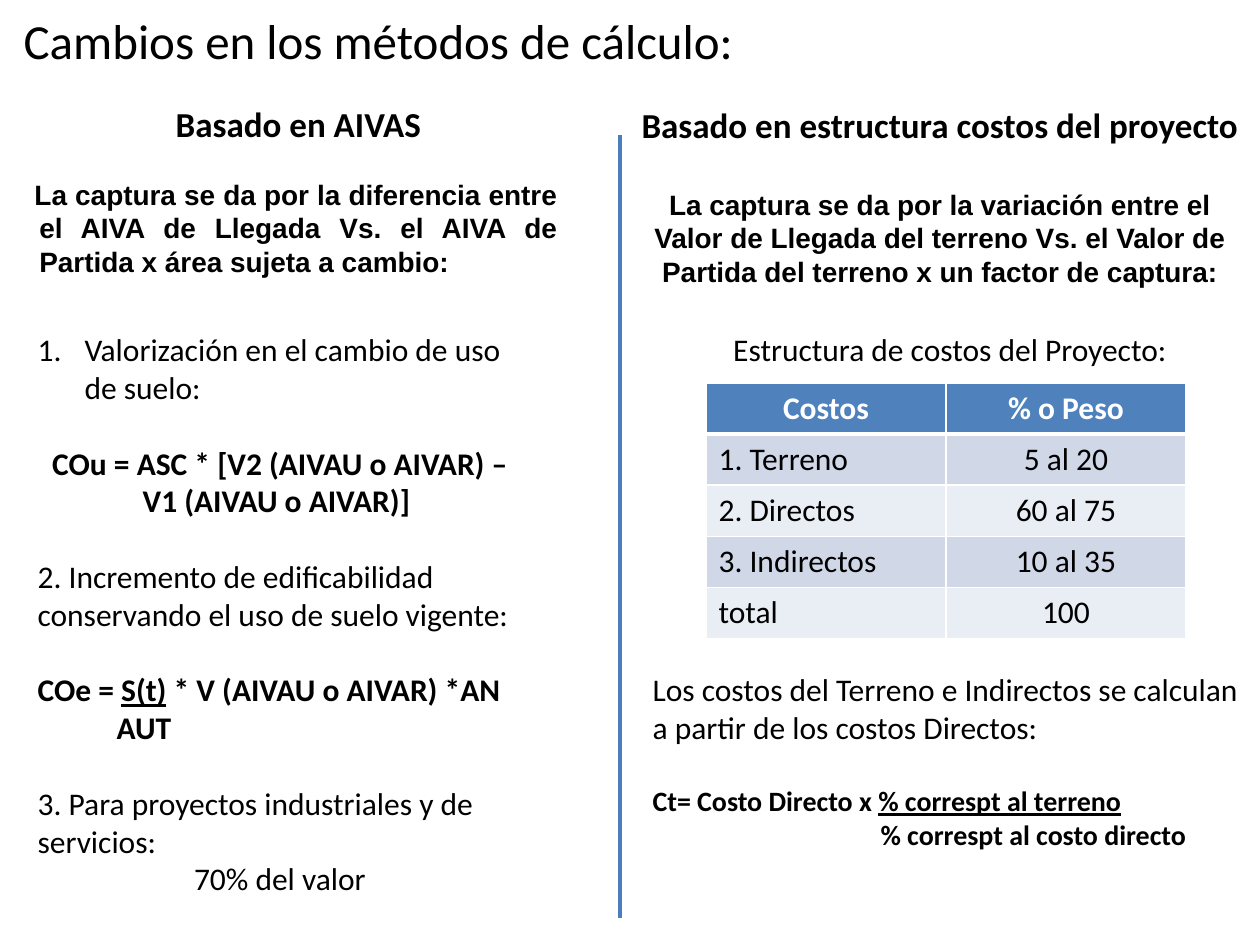
from dataclasses import dataclass

from lxml.etree import SubElement
from pptx import Presentation
from pptx.dml.color import RGBColor
from pptx.enum.shapes import MSO_CONNECTOR
from pptx.enum.text import MSO_ANCHOR, MSO_AUTO_SIZE, PP_ALIGN
from pptx.oxml.ns import qn
from pptx.util import Pt

BLACK = RGBColor(0x00, 0x00, 0x00)
WHITE = RGBColor(0xFF, 0xFF, 0xFF)
DIVIDER_BLUE = RGBColor(0x4B, 0x7E, 0xBC)
HEADER_BLUE = RGBColor(0x4F, 0x81, 0xBD)
BANDS = (RGBColor(0xD0, 0xD8, 0xE8), RGBColor(0xE9, 0xED, 0xF4))

PX_PER_INCH = 126
LINE_GAP = 21.6  # points: one empty line of 18 pt text
LEFT, CENTER, JUSTIFY = PP_ALIGN.LEFT, PP_ALIGN.CENTER, PP_ALIGN.JUSTIFY


def px(length: int) -> int:
    return round(length * 914400 / PX_PER_INCH)


@dataclass
class Span:
    text: str
    underline: bool = False


@dataclass
class Para:
    spans: list[Span]
    size: int = 18
    bold: bool = False
    font: str = "Calibri"
    color: RGBColor = BLACK
    align: PP_ALIGN = LEFT
    before: float = 0
    margin: int = 0
    indent: int = 0
    numbered: bool = False


def para(*parts: str | Span, **style) -> Para:
    """Describe a paragraph; keyword arguments are the fields of Para."""
    return Para([Span(part) if isinstance(part, str) else part for part in parts], **style)


def write(frame, paras: list[Para]) -> None:
    for index, item in enumerate(paras):
        target = frame.paragraphs[0] if index == 0 else frame.add_paragraph()
        target.alignment = item.align
        target.space_before = Pt(item.before)
        properties = target._p.get_or_add_pPr()
        properties.set("marL", str(px(item.margin)))
        properties.set("indent", str(px(item.indent)))
        if item.numbered:
            SubElement(properties, qn("a:buAutoNum"), type="arabicPeriod")
        else:
            SubElement(properties, qn("a:buNone"))
        for span in item.spans:
            run = target.add_run()
            run.text = span.text
            run.font.name = item.font
            run.font.size = Pt(item.size)
            run.font.bold = item.bold
            run.font.underline = span.underline
            run.font.color.rgb = item.color


def fill_box(box, area: tuple[int, int, int, int], paras: list[Para],
             anchor: MSO_ANCHOR = MSO_ANCHOR.TOP) -> None:
    box.left, box.top, box.width, box.height = map(px, area)
    frame = box.text_frame
    frame.word_wrap = True
    frame.auto_size = MSO_AUTO_SIZE.NONE
    frame.vertical_anchor = anchor
    write(frame, paras)


def add_text(page, area: tuple[int, int, int, int], paras: list[Para]) -> None:
    fill_box(page.shapes.add_textbox(*map(px, area)), area, paras)


def add_divider(page, x: int, top: int, bottom: int) -> None:
    line = page.shapes.add_connector(
        MSO_CONNECTOR.STRAIGHT, px(x), px(top), px(x), px(bottom))
    line.line.color.rgb = DIVIDER_BLUE
    line.line.width = Pt(2.25)
    SubElement(line._element.spPr, qn("a:effectLst"))


def set_borders(cell, bottom: int) -> None:
    properties = cell._tc.get_or_add_tcPr()
    widths = {"a:lnL": 1, "a:lnR": 1, "a:lnT": 1, "a:lnB": bottom}
    for position, (tag, width) in enumerate(widths.items()):
        border = properties.makeelement(qn(tag), {"w": str(Pt(width))})
        fill = SubElement(border, qn("a:solidFill"))
        SubElement(fill, qn("a:srgbClr"), val=str(WHITE))
        properties.insert(position, border)


def add_cost_table(page, rows: list[tuple[str, str]]) -> None:
    column_width, row_height = 240, 50
    table = page.shapes.add_table(
        len(rows), 2, px(706), px(383),
        px(2 * column_width), px(len(rows) * row_height)).table
    for row_index, row in enumerate(rows):
        header = row_index == 0
        for column_index, text in enumerate(row):
            cell = table.cell(row_index, column_index)
            cell.fill.solid()
            cell.fill.fore_color.rgb = HEADER_BLUE if header else BANDS[(row_index - 1) % 2]
            set_borders(cell, bottom=3 if header else 1)
            write(cell.text_frame, [para(
                text, bold=header, color=WHITE if header else BLACK,
                align=CENTER if header or column_index else LEFT)])


def main() -> None:
    deck = Presentation()
    deck.slide_width, deck.slide_height = px(1260), px(945)
    page = deck.slides.add_slide(deck.slide_layouts[3])
    left_body, right_body = page.placeholders[1], page.placeholders[2]

    # Title
    fill_box(page.shapes.title, (0, -4, 748, 87),
             [para(" Cambios en los métodos de cálculo:", size=28)], MSO_ANCHOR.MIDDLE)

    # Column headings
    add_text(page, (-35, 96, 605, 190), [
        para("Basado en AIVAS", size=20, bold=True, align=CENTER, margin=62),
        para(" La captura se da por la diferencia entre el AIVA de Llegada Vs. "
             "el AIVA de Partida x área sujeta a cambio:",
             size=16, bold=True, font="Arial", align=JUSTIFY,
             before=19, margin=62, indent=-13),
    ])
    add_text(page, (620, 97, 640, 233), [
        para("Basado en estructura costos del proyecto", size=20, bold=True, align=CENTER),
        para("La captura se da por la variación entre el Valor de Llegada del terreno "
             "Vs. el Valor de Partida del terreno x un factor de captura:",
             size=16, bold=True, font="Arial", align=CENTER, before=24),
    ])
    add_divider(page, 620, 135, 918)

    # Left column: methods and formulas
    fill_box(left_body, (25, 324, 510, 585), [
        para("Valorización en el cambio de uso de suelo:",
             margin=47, indent=-47, numbered=True),
        para("COu = ASC * [V2 (AIVAU o AIVAR) – V1 (AIVAU o AIVAR)] ",
             bold=True, align=CENTER, before=LINE_GAP),
        para("2. Incremento de edificabilidad conservando el uso de suelo vigente:",
             before=LINE_GAP),
        para("COe = ", Span("S(t)", underline=True), " * V (AIVAU o AIVAR) *AN",
             bold=True, before=LINE_GAP),
        para("AUT", bold=True, margin=79),
        para("3. Para proyectos industriales y de servicios:", before=LINE_GAP),
        para("70% del valor", align=CENTER),
    ])

    # Right column: cost structure, with room for the table
    fill_box(right_body, (640, 324, 620, 615), [
        para("Estructura de costos del Proyecto:", align=CENTER),
        para("Los costos del Terreno e Indirectos se calculan a partir "
             "de los costos Directos:", before=8 * LINE_GAP),
        para("Ct= Costo Directo x ", Span("% correspt al terreno", underline=True),
             size=16, bold=True, before=LINE_GAP),
        para("% correspt al costo directo", size=16, bold=True, margin=228),
    ])
    add_cost_table(page, [
        ("Costos", "% o Peso"),
        ("1. Terreno", "5 al 20"),
        ("2. Directos", "60 al 75"),
        ("3. Indirectos", "10 al 35"),
        ("total", "100"),
    ])

    deck.save("out.pptx")


if __name__ == "__main__":
    main()
